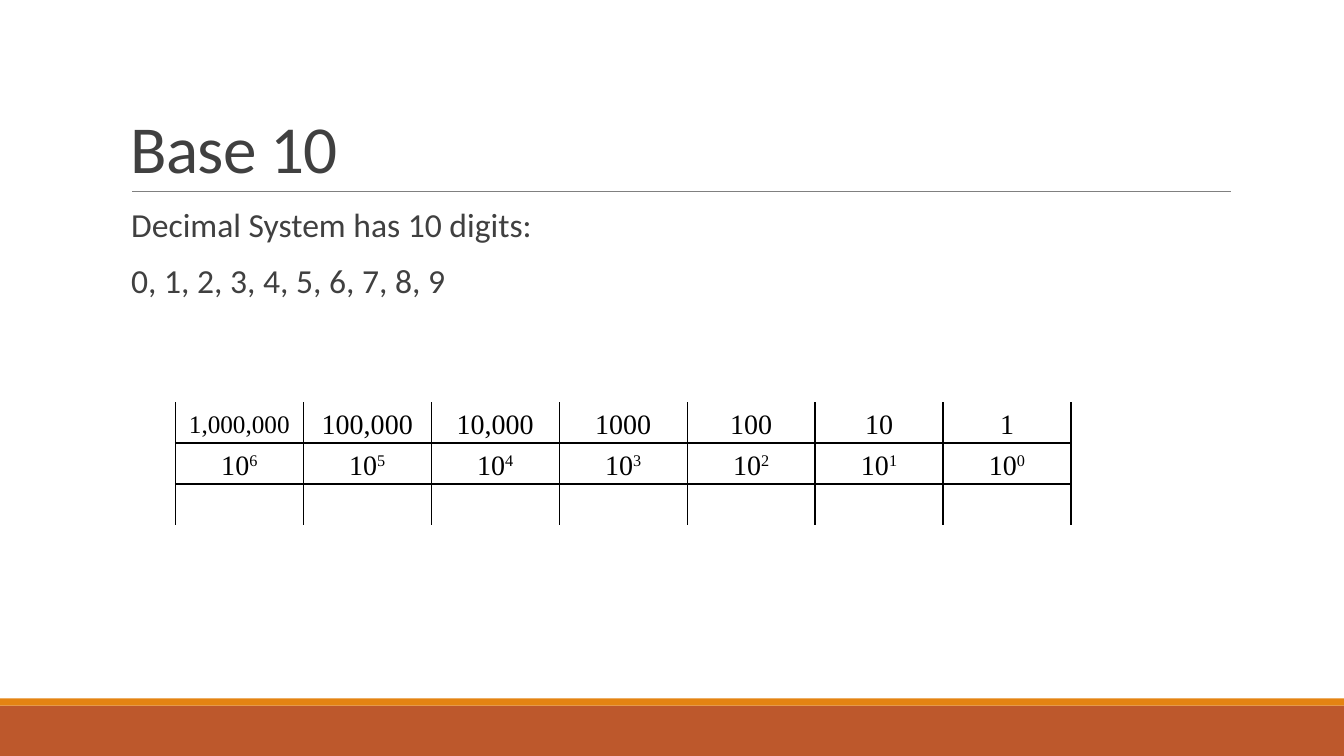
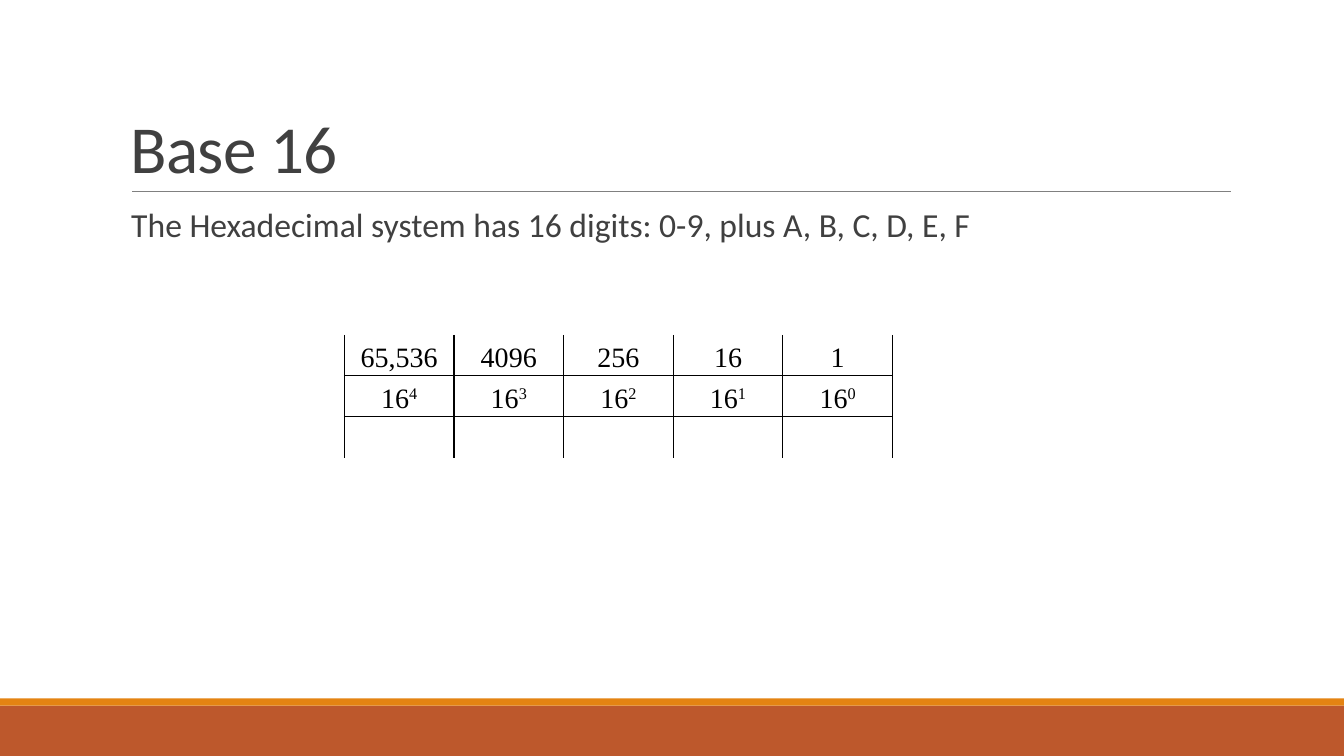
from pptx import Presentation
from pptx import util as u
from pptx.dml.color import RGBColor
from pptx.enum import shapes, text
from pptx.oxml import parse_xml
from pptx.oxml.ns import nsdecls

PX = 9525
WIDE, HIGH = 1280, 720
LEFT, SPAN = 115, 1056
ROW = 39
HEX = {"band": "BD582C", "strip": "E48312", "rule": "808080",
       "text": "404040", "cell": "000000"}

# title, body lines, base, place values, table left, top and width, small columns
DECK = [
    ("Base 10", ["Decimal System has 10 digits:", "0, 1, 2, 3, 4, 5, 6, 7, 8, 9"],
     10, ["1,000,000", "100,000", "10,000", "1000", "100", "10", "1"],
     (167, 383, 853), [0]),
    ("Base 16", ["The Hexadecimal system has 16 digits: 0-9, plus A, B, C, D, E, F"],
     16, ["65,536", "4096", "256", "16", "1"],
     (328, 319, 522), []),
]


def style(para, face, size, color, line):
    para.font.name = face
    para.font.size = u.Pt(size)
    para.font.color.rgb = RGBColor.from_string(HEX[color])
    para.line_spacing = line


def edge(cell, side, shown):
    """Draw or hide one border; call in the order L, R, T, B."""
    fill = "<a:noFill/>"
    if shown:
        fill = f'<a:solidFill><a:srgbClr val="{HEX["cell"]}"/></a:solidFill>'
    cell._tc.get_or_add_tcPr().append(parse_xml(
        f'<a:ln{side} {nsdecls("a")} w="{u.Pt(1)}">{fill}</a:ln{side}>'))


prs = Presentation()
prs.slide_width, prs.slide_height = WIDE * PX, HIGH * PX

for title, lines, base, values, (left, top, width), small in DECK:
    slide = prs.slides.add_slide(prs.slide_layouts[6])

    # Footer bands and title rule
    for name, y, h in (("band", 672, 48), ("strip", 665, 7)):
        bar = slide.shapes.add_shape(shapes.MSO_SHAPE.RECTANGLE,
                                     0, y * PX, WIDE * PX, h * PX)
        bar.shadow.inherit = False
        bar.fill.solid()
        bar.fill.fore_color.rgb = RGBColor.from_string(HEX[name])
        bar.line.fill.background()
    rule = slide.shapes.add_connector(shapes.MSO_CONNECTOR.STRAIGHT,
                                      126 * PX, 182 * PX, 1172 * PX, 182 * PX)
    rule.line.color.rgb = RGBColor.from_string(HEX["rule"])
    rule.line.width = u.Pt(0.5)
    rule._element.spPr.append(parse_xml(f'<a:effectLst {nsdecls("a")}/>'))

    # Title
    frame = slide.shapes.add_textbox(LEFT * PX, 30 * PX, SPAN * PX, 153 * PX).text_frame
    frame.word_wrap = True
    frame.vertical_anchor = text.MSO_ANCHOR.BOTTOM
    para = frame.paragraphs[0]
    run = para.add_run()
    run.text = title
    run._r.get_or_add_rPr().set("spc", "-50")
    style(para, "Calibri", 48, "text", 0.85)

    # Body
    frame = slide.shapes.add_textbox(LEFT * PX, 194 * PX, SPAN * PX, 422 * PX).text_frame
    frame.word_wrap = True
    frame.margin_left, frame.margin_right = 10 * PX, 0
    frame.text = "\n".join(lines)
    for para in frame.paragraphs:
        style(para, "Calibri", 24, "text", 0.9)
        para.space_before, para.space_after = u.Pt(12), u.Pt(2)

    # Place values, powers and an empty row for digits
    count = len(values)
    table = slide.shapes.add_table(3, count, left * PX, top * PX,
                                   width * PX, 3 * ROW * PX).table
    table.first_row = table.horz_banding = False
    for r in range(3):
        for c in range(count):
            cell = table.cell(r, c)
            for side, shown in (("L", True), ("R", True), ("T", r > 0), ("B", r < 2)):
                edge(cell, side, shown)
            cell.fill.background()
            cell.margin_left = cell.margin_right = 7 * PX
            cell.margin_top = cell.margin_bottom = 0
            cell.vertical_anchor = text.MSO_ANCHOR.MIDDLE
            para = cell.text_frame.paragraphs[0]
            para.alignment = text.PP_ALIGN.CENTER
            style(para, "Times New Roman", 18 if r == 0 and c in small else 20,
                  "cell", 1.15)
            if r == 0:
                para.add_run().text = values[c]
            elif r == 1:
                para.add_run().text = str(base)
                power = para.add_run()
                power.text = str(count - 1 - c)
                power._r.get_or_add_rPr().set("baseline", "30000")

prs.save("out.pptx")
